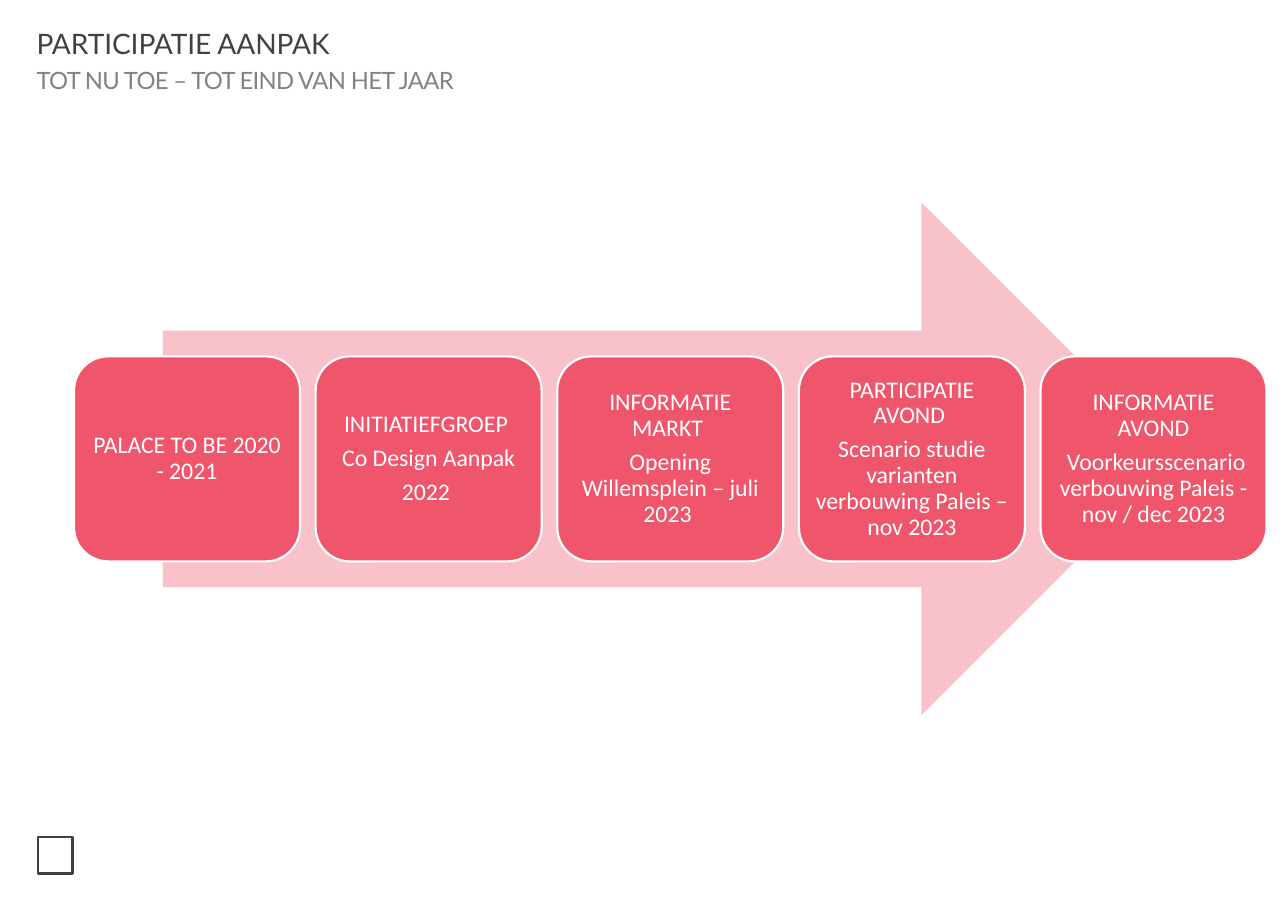
from lxml import etree
from pptx import Presentation
from pptx.dml.color import RGBColor
from pptx.enum.shapes import MSO_SHAPE
from pptx.enum.text import MSO_ANCHOR, PP_ALIGN
from pptx.oxml.ns import qn
from pptx.util import Inches, Pt

RIGHT_ARROW = MSO_SHAPE.RIGHT_ARROW
ROUNDED_RECTANGLE = MSO_SHAPE.ROUNDED_RECTANGLE
RECTANGLE = MSO_SHAPE.RECTANGLE
MIDDLE = MSO_ANCHOR.MIDDLE
CENTER = PP_ALIGN.CENTER

# A3 landscape, 420 by 297 millimetres
SLIDE_WIDTH = 420 / 25.4
SLIDE_HEIGHT = 297 / 25.4

PINK = "EF556B"
WHITE = "FFFFFF"
DARK_GREY = "414042"
MID_GREY = "808285"

# text, size, colour, space before, letter spacing (hundredths of a point)
HEADINGS = [
    ("PARTICIPATIE AANPAK", 26, DARK_GREY, 6.7, -10),
    ("TOT NU TOE – TOT EIND VAN HET JAAR", 22, MID_GREY, 4.8, -60),
]
STEPS = [
    ["PALACE TO BE 2020 - 2021"],
    ["INITIATIEFGROEP ", "Co Design Aanpak", "2022 "],
    ["INFORMATIE MARKT ", "Opening Willemsplein – juli 2023 "],
    ["PARTICIPATIE AVOND ",
     "Scenario studie varianten verbouwing Paleis – nov 2023"],
    ["INFORMATIE AVOND",
     " Voorkeursscenario verbouwing Paleis - nov / dec 2023"],
]


def color(hex_value):
    return RGBColor.from_string(hex_value)


def add_shape(slide, kind, left, top, width, height, fill=None, line=None):
    shape = slide.shapes.add_shape(
        kind, Inches(left), Inches(top), Inches(width), Inches(height))
    shape.shadow.inherit = False
    if fill:
        shape.fill.solid()
        shape.fill.fore_color.rgb = color(fill)
    else:
        shape.fill.background()
    if line:
        shape.line.color.rgb = color(line)
        shape.line.width = Pt(2)
    else:
        shape.line.fill.background()
    return shape


def set_margins(frame, left, top, right, bottom):
    frame.margin_left, frame.margin_top = Inches(left), Inches(top)
    frame.margin_right, frame.margin_bottom = Inches(right), Inches(bottom)
    frame.word_wrap = True


def add_paragraphs(frame, texts, size, font_name):
    """Fill the frame with one paragraph per text and return them."""
    for index, text in enumerate(texts):
        paragraph = frame.add_paragraph() if index else frame.paragraphs[0]
        paragraph.add_run().text = text
        paragraph.font.name = font_name
        paragraph.font.size = Pt(size)
    return frame.paragraphs


def add_title(slide, left, top, width, height):
    box = slide.shapes.add_textbox(
        Inches(left), Inches(top), Inches(width), Inches(height))
    set_margins(box.text_frame, 0.01, 0.1, 0, 0)
    paragraphs = add_paragraphs(
        box.text_frame, [heading[0] for heading in HEADINGS], 22, "Lato")
    for paragraph, heading in zip(paragraphs, HEADINGS):
        _, size, hex_value, space_before, letter_spacing = heading
        paragraph.font.size = Pt(size)
        paragraph.font.color.rgb = color(hex_value)
        paragraph.space_before = Pt(space_before)
        properties = paragraph.runs[0]._r.get_or_add_rPr()
        properties.set("spc", str(letter_spacing))


def add_step(slide, left, top, width, height, texts):
    step = add_shape(slide, ROUNDED_RECTANGLE, left, top, width, height,
                     PINK, WHITE)
    frame = step.text_frame
    set_margins(frame, 0.09, 0.09, 0.09, 0.09)
    frame.vertical_anchor = MIDDLE
    for paragraph in add_paragraphs(frame, texts, 22, "Calibri"):
        paragraph.font.color.rgb = color(WHITE)
        paragraph.alignment = CENTER
        paragraph.line_spacing = 0.9
        paragraph.space_after = Pt(7.7)


def add_process(slide, left, top, width, height):
    # Translucent arrow behind the steps
    arrow = add_shape(slide, RIGHT_ARROW, left + 1.14, top, 13.03, height, PINK)
    arrow_color = arrow.fill._xPr.find(qn("a:solidFill"))[0]
    etree.SubElement(arrow_color, qn("a:alpha"), val="36000")

    # Evenly spaced steps, centred on the arrow
    gap = 0.2
    step_width = (width - gap * (len(STEPS) - 1)) / len(STEPS)
    step_height = height * 0.4
    step_top = top + (height - step_height) / 2
    for index, texts in enumerate(STEPS):
        step_left = left + index * (step_width + gap)
        add_step(slide, step_left, step_top, step_width, step_height, texts)


def add_footer_mark(slide, left, top, width, height):
    mark = add_shape(slide, RECTANGLE, left, top, width, height,
                     line=DARK_GREY)
    mark.line.width = Pt(2.2)


def main():
    presentation = Presentation()
    presentation.slide_width = Inches(SLIDE_WIDTH)
    presentation.slide_height = Inches(SLIDE_HEIGHT)
    slide = presentation.slides.add_slide(presentation.slide_layouts[6])
    add_title(slide, 0.46, 0.24, 8.42, 0.97)
    add_process(slide, 0.95, 2.6, 15.31, 6.58)
    add_footer_mark(slide, 0.49, 10.74, 0.44, 0.47)
    presentation.save("out.pptx")


if __name__ == "__main__":
    main()
